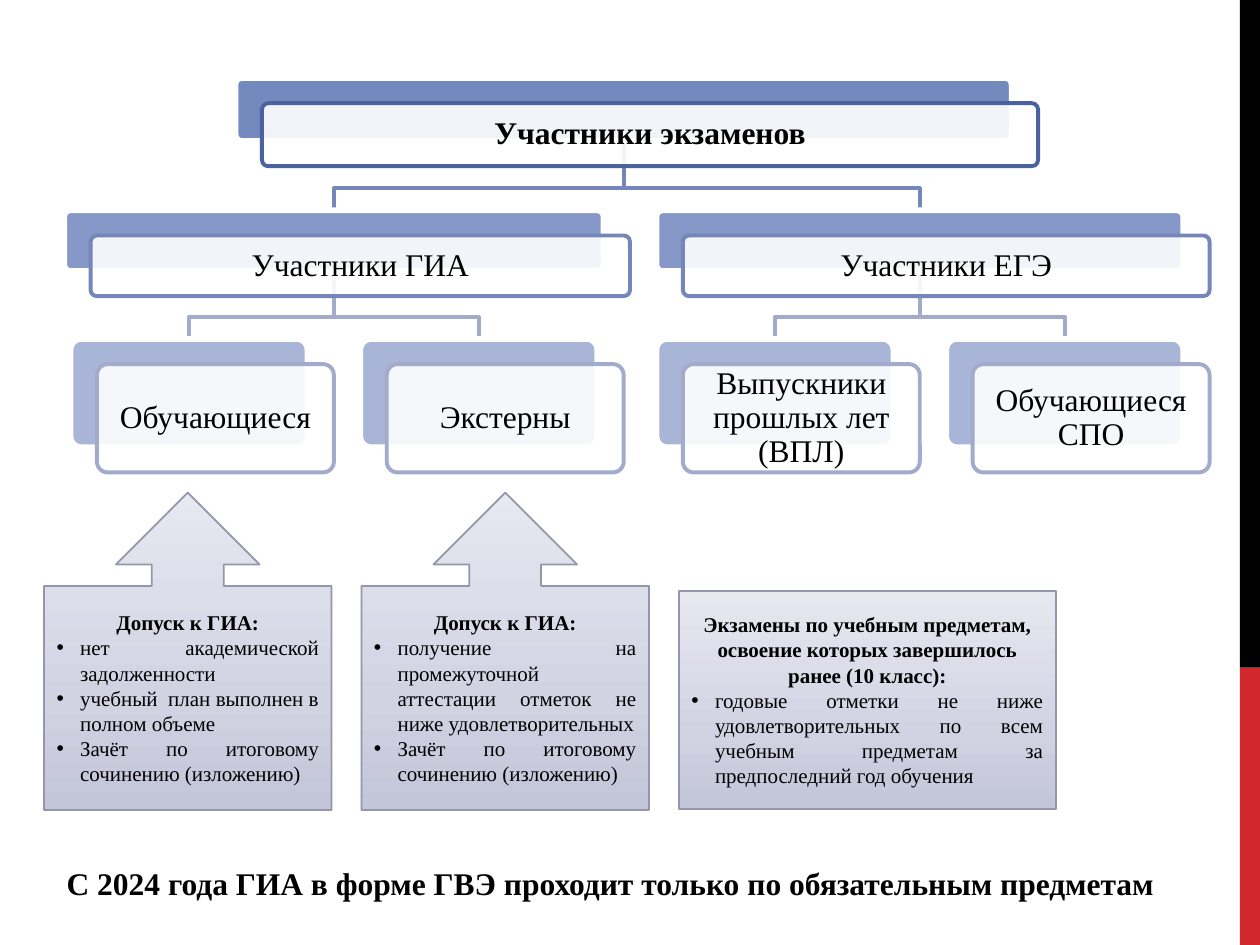
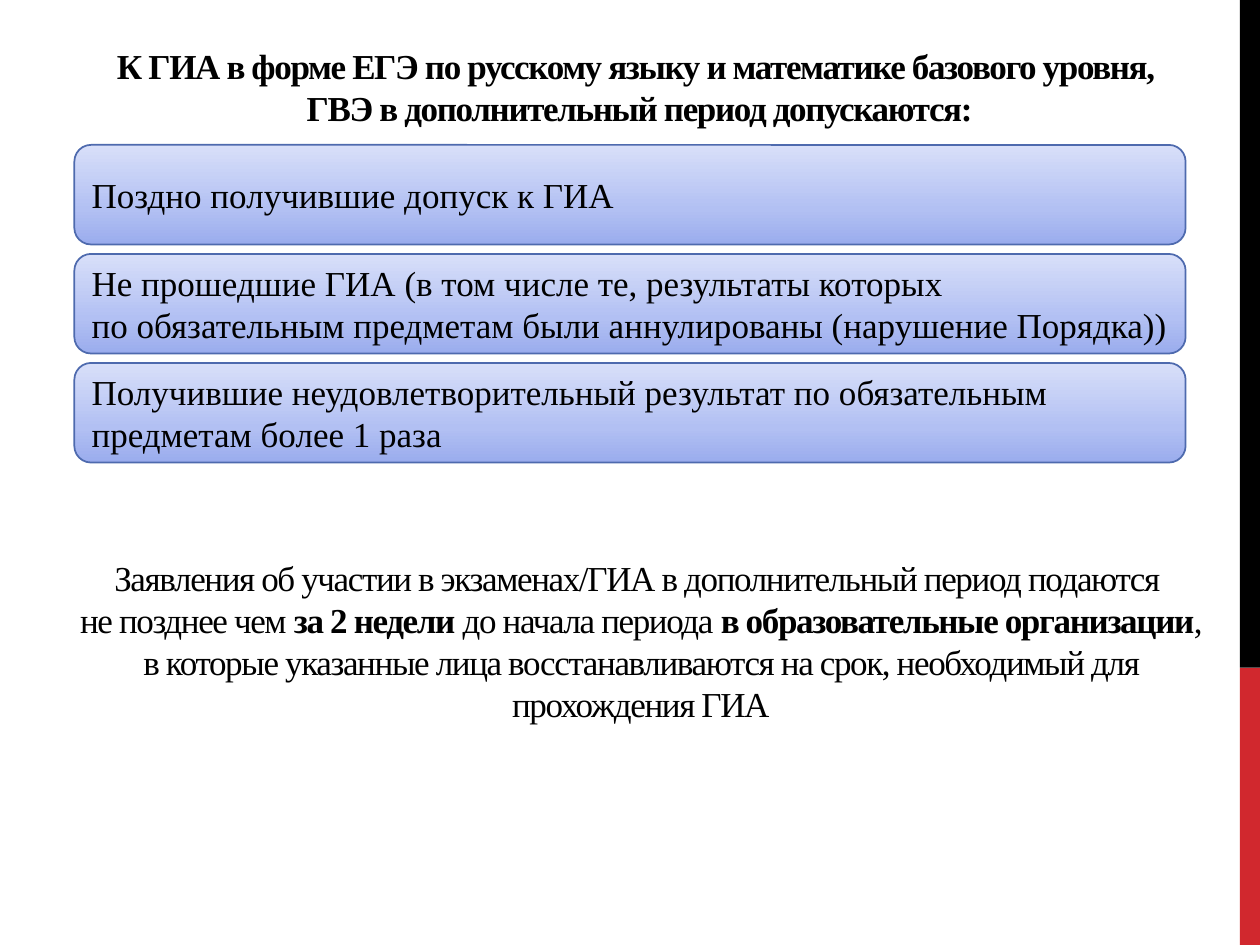
from copy import deepcopy

from lxml import etree
from pptx import Presentation
from pptx.dml.color import RGBColor
from pptx.enum import shapes, text
from pptx.oxml.ns import qn
from pptx.util import Pt

FONT = "Times New Roman"
BLACK, RED, WHITE = "000000", "D1282E", "FFFFFF"
CARD_BLUE = "526DB0"
GREY_GRADIENT = ["C3C5D9", "D1D3E3", "E8E8F1"]
BLUE_GRADIENT = ["9AACED", "B2C0F3", "D8DFF9"]
GRADIENT_STOPS = [0, 0.35, 1]
CENTER, JUSTIFY, LEFT = text.PP_ALIGN.CENTER, text.PP_ALIGN.JUSTIFY, text.PP_ALIGN.LEFT
MIDDLE = text.MSO_ANCHOR.MIDDLE
SHAPE = shapes.MSO_SHAPE


def paint(shape, fill=None, line=None, width=1, alpha=100):
    """Fill with a colour, a three-colour gradient or nothing; alpha is in percent."""
    shape.shadow.inherit = False
    if fill is None:
        shape.fill.background()
    elif isinstance(fill, list):
        shape.fill.gradient()
        shape.fill.gradient_angle = 90
        stops = shape.element.spPr.find(qn("a:gradFill")).find(qn("a:gsLst"))
        stops.insert(1, deepcopy(stops[0]))
        for stop, position, color in zip(shape.fill.gradient_stops, GRADIENT_STOPS, fill):
            stop.position = position
            stop.color.rgb = RGBColor.from_string(color)
    else:
        shape.fill.solid()
        shape.fill.fore_color.rgb = RGBColor.from_string(fill)
        if alpha < 100:
            color_node = shape.element.spPr.find(qn("a:solidFill"))[0]
            etree.SubElement(color_node, qn("a:alpha"), val=str(alpha * 1000))
    if line:
        shape.line.color.rgb = RGBColor.from_string(line)
        shape.line.width = Pt(width)
    else:
        shape.line.fill.background()


def write(frame, paragraphs, size, align=CENTER, anchor=MIDDLE, spacing=None, tracking=None):
    """Text between ** is bold; a paragraph that starts with • is a justified bullet."""
    for name, value in {"word_wrap": True, "vertical_anchor": anchor,
                        "auto_size": text.MSO_AUTO_SIZE.NONE}.items():
        setattr(frame, name, value)
    for index, content in enumerate(paragraphs):
        para = frame.add_paragraph() if index else frame.paragraphs[0]
        bullet = content.startswith("•")
        para.alignment = JUSTIFY if bullet else align
        para.line_spacing = spacing
        if bullet:
            content = content[1:]
            properties = para._p.get_or_add_pPr()
            properties.set("marL", str(Pt(13.5)))
            properties.set("indent", str(-Pt(13.5)))
            etree.SubElement(properties, qn("a:buFont"), typeface="Arial")
            etree.SubElement(properties, qn("a:buChar"), char="•")
        for part, words in enumerate(content.split("**")):
            for number, row in enumerate(words.split("\n")):
                if number:
                    para.add_line_break()
                if not row:
                    continue
                span = para.add_run()
                span.text = row
                for name, value in {"name": FONT, "size": Pt(size), "bold": part % 2 == 1}.items():
                    setattr(span.font, name, value)
                span.font.color.rgb = RGBColor.from_string(BLACK)
                if tracking is not None:
                    span._r.get_or_add_rPr().set("spc", str(int(tracking * 100)))


deck = Presentation()
deck.slide_width, deck.slide_height = Pt(720), Pt(540)
tree_page = deck.slides.add_slide(deck.slide_layouts[6])
period_page = deck.slides.add_slide(deck.slide_layouts[5])

# Side band on the slide master
for number, (top, height, color) in enumerate([(0, 381.6, BLACK), (381.6, 158.4, RED)]):
    band = tree_page.shapes.add_shape(SHAPE.RECTANGLE, Pt(708.5), Pt(top), Pt(11.5), Pt(height))
    paint(band, color)
    band.element.nvSpPr.cNvPr.set("id", str(20 + number))
    deck.slide_master.shapes.element.insert(2, band.element)

# Slide 1: tree of exam participants
LEVELS = [  # top, height, opacity of the back card, outline
    (44.6, 36, 80, "4A63A0"),
    (120.2, 34.6, 70, "7586BA"),
    (193.7, 61.9, 50, "A2ABCC"),
]
NODES = [  # level, parent, left, width, label
    (0, None, 134.6, 443.5, "**Участники экзаменов**"),
    (1, 0, 36.7, 308.2, "Участники ГИА"),
    (1, 0, 375.1, 301, "Участники ЕГЭ"),
    (2, 1, 40.3, 135.4, "Обучающиеся"),
    (2, 1, 205.9, 135.4, "Экстерны"),
    (2, 2, 375.1, 135.4, "Выпускники прошлых лет (ВПЛ)"),
    (2, 2, 540.7, 135.4, "Обучающиеся СПО"),
]
SHIFT_X, SHIFT_Y, BEND = 15.1, 14.4, 12.6

for level, parent, left, width, label in reversed(NODES):
    if parent is None:
        continue
    parent_level, _, parent_left, parent_width, _ = NODES[parent]
    parent_top, parent_height = LEVELS[parent_level][:2]
    top, _, _, color = LEVELS[level]
    start_x, end_x = Pt(parent_left + parent_width / 2), Pt(left + width / 2)
    branch = tree_page.shapes.build_freeform(start_x, Pt(parent_top + parent_height))
    branch.add_line_segments(
        [(start_x, Pt(top - BEND)), (end_x, Pt(top - BEND)), (end_x, Pt(top))], close=False)
    paint(branch.convert_to_shape(), line=color, width=2.25)

for level, _, left, width, label in NODES:
    top, height, opacity, outline = LEVELS[level]
    for shift, fill, line, line_width, alpha in [(0, CARD_BLUE, WHITE, 3.25, opacity),
                                                 (1, WHITE, outline, 2.25, 90)]:
        card = tree_page.shapes.add_shape(
            SHAPE.ROUNDED_RECTANGLE, Pt(left + shift * SHIFT_X), Pt(top + shift * SHIFT_Y),
            Pt(width), Pt(height))
        card.adjustments[0] = 0.1
        paint(card, fill, line, line_width, alpha)
    for side in ("left", "right", "top", "bottom"):
        setattr(card.text_frame, f"margin_{side}", Pt(5))
    write(card.text_frame, [label], 18, spacing=0.9)

# Admission rules under the tree
ADMISSION = "**Допуск к ГИА:**"
ESSAY = "•Зачёт по итоговому сочинению (изложению)"
RULES = [  # shape, top, width, height, paragraphs
    (SHAPE.UP_ARROW_CALLOUT, 281.5, 164.2, 181.4,
     [ADMISSION, "•нет академической задолженности",
      "•учебный  план выполнен в полном объеме", ESSAY]),
    (SHAPE.UP_ARROW_CALLOUT, 281.5, 164.2, 181.4,
     [ADMISSION, "•получение на промежуточной аттестации отметок не ниже удовлетворительных",
      ESSAY]),
    (SHAPE.FLOWCHART_PROCESS, 337.7, 215.3, 124.6,
     ["**Экзамены по учебным предметам, освоение которых завершилось ранее (10 класс):**",
      "•годовые отметки не ниже удовлетворительных по всем учебным предметам "
      "за предпоследний год обучения"]),
]
for column, (kind, top, width, height, paragraphs) in enumerate(RULES):
    rule = tree_page.shapes.add_shape(
        kind, Pt(25.2 + column * 181.4), Pt(top), Pt(width), Pt(height))
    if kind == SHAPE.UP_ARROW_CALLOUT:
        for index, value in enumerate([0.25, 0.25, 0.25, 0.706]):
            rule.adjustments[index] = value
    paint(rule, GREY_GRADIENT, "9496A9")
    write(rule.text_frame, paragraphs, 12)

note = tree_page.shapes.add_textbox(Pt(31), Pt(486), Pt(643.7), Pt(33.1))
write(note.text_frame,
      ["**С 2024 года ГИА в форме ГВЭ проходит только по обязательным предметам**"],
      18, JUSTIFY, text.MSO_ANCHOR.TOP, 1.2)

# Slide 2: admission to the additional period
title = period_page.shapes.title
for name, value in {"left": 36, "top": 20.9, "width": 658.8, "height": 56.9}.items():
    setattr(title, name, Pt(value))
write(title.text_frame,
      ["**К ГИА в форме ЕГЭ по русскому языку и математике базового уровня, \n"
       "ГВЭ в дополнительный период допускаются:**"], 20, tracking=-0.8)

GROUPS = [
    "Поздно получившие допуск к ГИА",
    "Не прошедшие ГИА (в том числе те, результаты которых \n"
    "по обязательным предметам были аннулированы (нарушение Порядка))",
    "Получившие неудовлетворительный результат по обязательным предметам более 1 раза",
]
for row, group in enumerate(GROUPS):
    bar = period_page.shapes.add_shape(
        SHAPE.ROUNDED_RECTANGLE, Pt(42.5), Pt(82.8 + row * 62.3), Pt(635), Pt(56.9))
    paint(bar, BLUE_GRADIENT, "4E6AAE")
    write(bar.text_frame, [group], 20, LEFT)

application = period_page.shapes.add_textbox(Pt(36.7), Pt(303.8), Pt(658.8), Pt(124.6))
write(application.text_frame,
      ["Заявления об участии в экзаменах/ГИА в дополнительный период подаются \n"
       "не позднее чем **за 2 недели** до начала периода **в образовательные организации**, "
       "в которые указанные лица восстанавливаются на срок, необходимый для прохождения ГИА"],
      20, tracking=-0.8)

deck.save("out.pptx")
